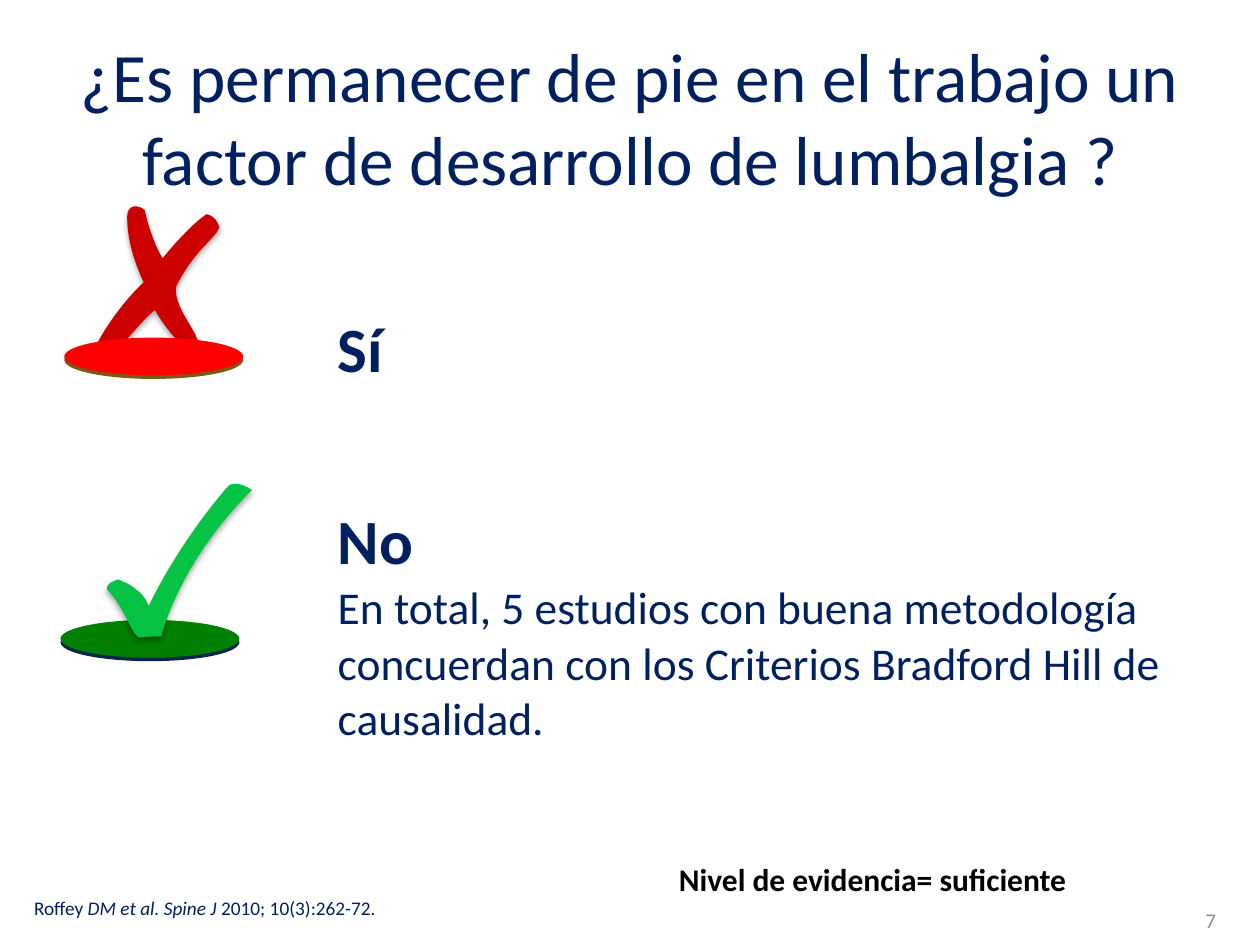
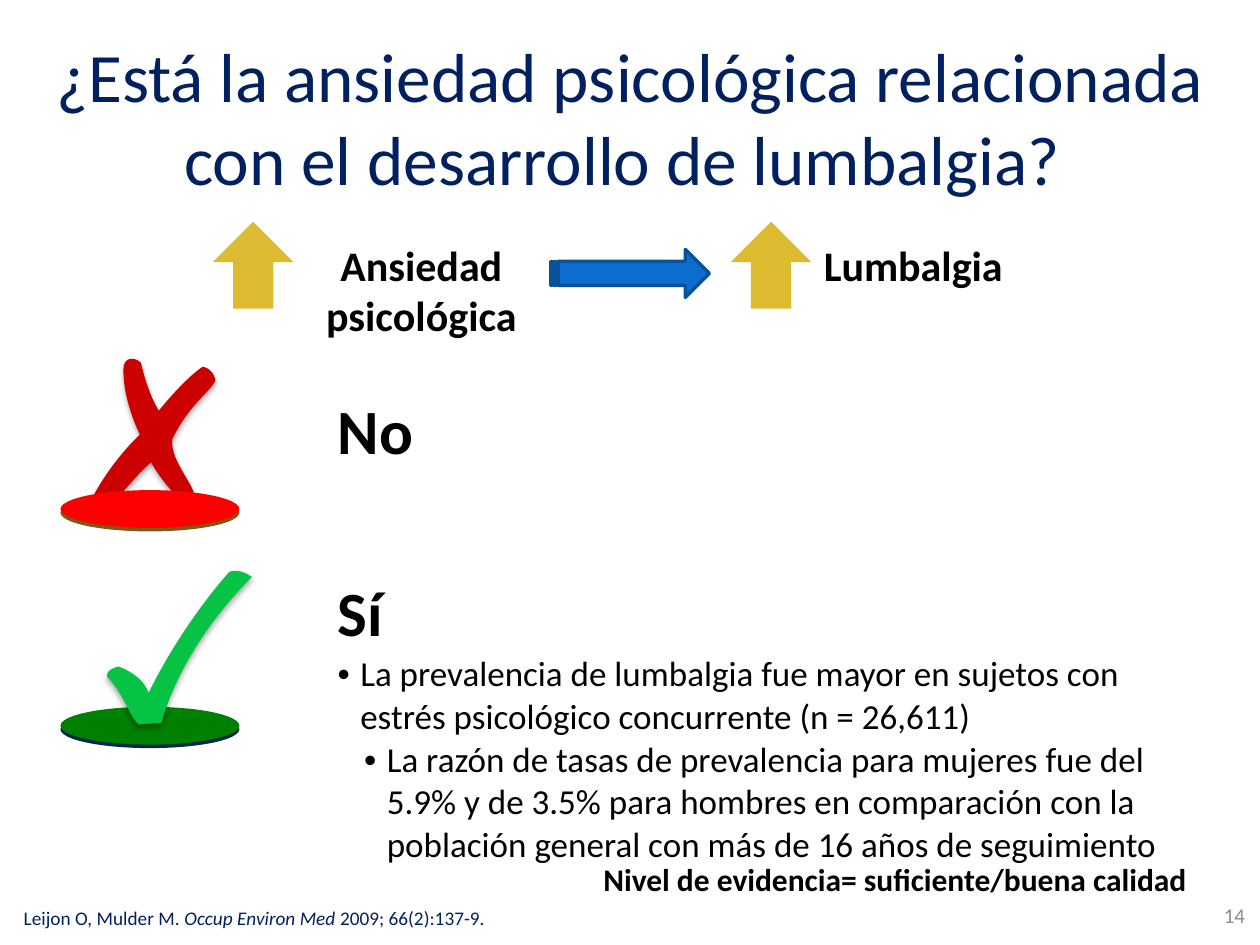
from lxml import etree
from pptx import Presentation
from pptx import util as u
from pptx.dml import color
from pptx.enum import shapes, text
from pptx.oxml import ns

COLORS = {
    "navy": "002060", "black": "000000", "grey": "8C8C8C",
    "cross": "CC0000", "cross_disc": "FF0000", "cross_rim": "7A5A14",
    "check": "06C245", "check_disc": "008000", "check_rim": "06264A",
    "gold": "DDBB30", "blue": "0C6FCF", "blue_line": "095299",
}
FONT = "Calibri"

# Outlines in inches: a start point, then Bézier segments (control, control, end).
CROSS = [(.02, 1.09),
         (.02, 1.09), (.15, .84), (.38, .62), (.26, .36), (.25, .19), (.25, .10),
         (.25, 0), (.34, 0), (.39, .05), (.39, .05), (.43, .26), (.53, .43),
         (.76, .15), (.88, .08), (.88, .08), (.97, .10), (.98, .19), (.98, .19),
         (.94, .28), (.78, .37), (.64, .65), (.61, .80), (.79, .99), (.81, 1.09),
         (.77, 1.13), (.79, 1.13), (.73, 1.17), (.73, 1.17), (.57, 1.02), (.47, .84),
         (.34, .95), (.31, 1.02), (.11, 1.21), (.11, 1.21), (0, 1.21), (.02, 1.09)]
CHECK = [(.01, .87),
         (.14, 1), (.19, 1.19), (.26, 1.25), (.35, 1.24), (.44, 1.24), (.44, 1.24),
         (.63, .57), (1.16, .08), (1.16, .08), (1.05, 0), (.98, .04), (.98, .04),
         (.98, .04), (.62, .43), (.34, 1), (.29, .85), (.10, .79), (.10, .79),
         (.10, .79), (0, .81), (.01, .87)]


def rgb(name):
    return color.RGBColor.from_string(COLORS[name])


def inches(*lengths):
    return [u.Inches(length) for length in lengths]


def style(para, size, ink, bold=False, italic_span=None):
    for index, span in enumerate(para.runs):
        span.font.name = FONT
        span.font.size = u.Pt(size)
        span.font.bold = bold
        span.font.italic = index == italic_span
        span.font.color.rgb = rgb(ink)


def paint(shape, fill, line=None, width=0):
    shape.shadow.inherit = False
    shape.fill.solid()
    shape.fill.fore_color.rgb = rgb(fill)
    if line:
        shape.line.color.rgb = rgb(line)
        shape.line.width = u.Pt(width)
    else:
        shape.line.fill.background()


def add_shadow(shape, ink, blur, distance, opacity):
    """Drop a shadow straight down; blur and distance in points, opacity in percent."""
    effects = shape._element.spPr.find(ns.qn("a:effectLst"))
    shadow = etree.SubElement(effects, ns.qn("a:outerShdw"), blurRad=str(u.Pt(blur)),
                              dist=str(u.Pt(distance)), dir="5400000", rotWithShape="0")
    tint = etree.SubElement(shadow, ns.qn("a:srgbClr"), val=COLORS[ink])
    etree.SubElement(tint, ns.qn("a:alpha"), val=str(opacity * 1000))


def curve_segments(shape):
    """Turn every three straight segments into one Bézier segment."""
    lines = list(shape._element.iter(ns.qn("a:lnTo")))
    for first in range(0, len(lines), 3):
        curve = etree.Element(ns.qn("a:cubicBezTo"))
        lines[first].addprevious(curve)
        for line in lines[first:first + 3]:
            curve.append(line[0])
            line.getparent().remove(line)


def add_mark(page, left, top, outline, fill):
    points = [inches(left + x, top + y) for x, y in outline]
    builder = page.shapes.build_freeform(*points[0])
    builder.add_line_segments(points[1:], close=True)
    mark = builder.convert_to_shape()
    curve_segments(mark)
    paint(mark, fill)
    add_shadow(mark, "black", 3.5, 2.2, 32)


def add_disc(page, left, top, kind):
    disc = page.shapes.add_shape(shapes.MSO_SHAPE.OVAL, *inches(left, top, 1.42, .3))
    paint(disc, f"{kind}_disc")
    add_shadow(disc, f"{kind}_rim", 0, 2, 100)


def add_cross_on_disc(page, left, top):
    add_mark(page, left, top, CROSS, "cross")
    add_disc(page, left - .25, top + 1.06, "cross")


def add_check_on_disc(page, left, top):
    add_disc(page, left - .36, top + 1.11, "check")
    add_mark(page, left, top, CHECK, "check")


def add_label(page, box, lines, size, ink, bold=False, wrap=True,
              align=text.PP_ALIGN.LEFT, anchor=text.MSO_ANCHOR.TOP):
    frame = page.shapes.add_textbox(*inches(*box)).text_frame
    frame.word_wrap = wrap
    frame.vertical_anchor = anchor
    frame.text = "\n".join(lines)
    for para in frame.paragraphs:
        para.alignment = align
        style(para, size, ink, bold)
    return frame


def add_citation(page, box, authors_journal_issue, italic_span=1):
    frame = add_label(page, box, [], 11, "navy")
    para = frame.paragraphs[0]
    for part in authors_journal_issue:
        para.add_run().text = part
    style(para, 11, "navy", italic_span=italic_span)
    return frame


def add_page(deck, title, title_box, number, number_box):
    page = deck.slides.add_slide(deck.slide_layouts.get_by_name("Title Only"))
    heading = page.shapes.title
    heading.left, heading.top, heading.width, heading.height = inches(*title_box)
    frame = heading.text_frame
    frame.text = title
    frame.vertical_anchor = text.MSO_ANCHOR.MIDDLE
    frame.paragraphs[0].alignment = text.PP_ALIGN.CENTER
    style(frame.paragraphs[0], 39.6, "navy")
    add_label(page, number_box, [number], 12, "grey", align=text.PP_ALIGN.RIGHT,
              anchor=text.MSO_ANCHOR.MIDDLE)
    return page


def add_bullet(para, margin, hanging=.18):
    props = para._p.get_or_add_pPr()
    props.set("marL", str(u.Inches(margin)))
    props.set("indent", str(-u.Inches(hanging)))
    etree.SubElement(props, ns.qn("a:buFont"), typeface="Arial")
    etree.SubElement(props, ns.qn("a:buChar"), char="•")


def add_answers(page, box, row_heights, rejected, accepted, details, size, ink):
    """Put the rejected answer above the accepted one and its details."""
    table = page.shapes.add_table(2, 1, *inches(*box)).table
    table.first_row = table.horz_banding = False
    for row, height, lines in zip(table.rows, row_heights,
                                  ([rejected], [accepted, *details])):
        row.height = u.Inches(height)
        cell = row.cells[0]
        cell.fill.background()
        cell.text_frame.text = "\n".join(lines)
        for index, para in enumerate(cell.text_frame.paragraphs):
            style(para, size if index else 36, ink, bold=index == 0)
    table.cell(0, 0).vertical_anchor = text.MSO_ANCHOR.MIDDLE
    return table


def add_relation(page, left, top):
    """Show that more anxiety leads to more back pain."""
    for offset in (0, 4.11):
        rise = page.shapes.add_shape(shapes.MSO_SHAPE.UP_ARROW,
                                     *inches(left + offset, top, .64, .69))
        paint(rise, "gold")
    leads_to = page.shapes.add_shape(shapes.MSO_SHAPE.STRIPED_RIGHT_ARROW,
                                     *inches(left + 2.68, top + .22, 1.26, .38))
    paint(leads_to, "blue", "blue_line", 2)
    add_label(page, (left + .79, top + .09, 1.73, .91), ["Ansiedad", "psicológica"],
              24, "black", bold=True, wrap=False, align=text.PP_ALIGN.CENTER)
    add_label(page, (left + 4.75, top + .09, 1.64, .5), ["Lumbalgia"],
              24, "black", bold=True, wrap=False)


def add_evidence(page, box, level):
    add_label(page, box, [f"Nivel de evidencia= {level}"], 18, "black",
              bold=True, wrap=False)


def build_standing_page(deck):
    page = add_page(
        deck, "¿Es permanecer de pie en el trabajo un factor de desarrollo de lumbalgia ?",
        (.5, .3, 9, 1.25), "7", (7.42, 7.1, 2.33, .4))
    add_check_on_disc(page, .84, 3.81)
    add_cross_on_disc(page, .76, 1.62)
    frame = add_citation(page, (.27, 7.11, 9.45, .19),
                         ["Roffey ", "DM et al. Spine J", " 2010; 10(3):262-72."])
    frame.margin_left = frame.margin_right = frame.margin_top = frame.margin_bottom = 0
    frame.vertical_anchor = text.MSO_ANCHOR.BOTTOM
    add_answers(page, (2.58, 1.62, 7.14, 4.71), (2.33, 2.38), "Sí", "No",
                ["En total, 5 estudios con buena metodología concuerdan con los "
                 "Criterios Bradford Hill de causalidad."], 26, "navy")
    add_evidence(page, (5.29, 6.78, 3.3, .4), "suficiente")


def build_anxiety_page(deck):
    page = add_page(
        deck, "¿Está la ansiedad psicológica relacionada con el desarrollo de lumbalgia? ",
        (0, .3, 10, 1.25), "14", (7.65, 7.06, 2.33, .4))
    add_cross_on_disc(page, .73, 2.83)
    table = add_answers(
        page, (2.58, 2.42, 7.06, 4.08), (2.04, 2.04), "No", "Sí",
        ["La prevalencia de lumbalgia fue mayor en sujetos con estrés psicológico "
         "concurrente (n = 26,611)",
         "La razón de tasas de prevalencia para mujeres fue del 5.9% y de 3.5% para "
         "hombres en comparación con la población general con más de 16 años de "
         "seguimiento"], 20, "black")
    answer, *details = table.cell(1, 0).text_frame.paragraphs
    answer.line_spacing = 1.1
    for para, margin in zip(details, (.18, .39)):
        add_bullet(para, margin)
    add_check_on_disc(page, .84, 4.5)
    add_evidence(page, (4.69, 6.78, 4.87, .4), "suficiente/buena calidad")
    add_relation(page, 1.69, 1.76)
    add_citation(page, (.09, 7.14, 5, .29),
                 ["Leijon O, Mulder M. ", "Occup Environ Med", " 2009; 66(2):137-9."])


def main():
    deck = Presentation()
    deck.slide_width, deck.slide_height = inches(10, 7.5)
    build_standing_page(deck)
    build_anxiety_page(deck)
    deck.save("out.pptx")


if __name__ == "__main__":
    main()
